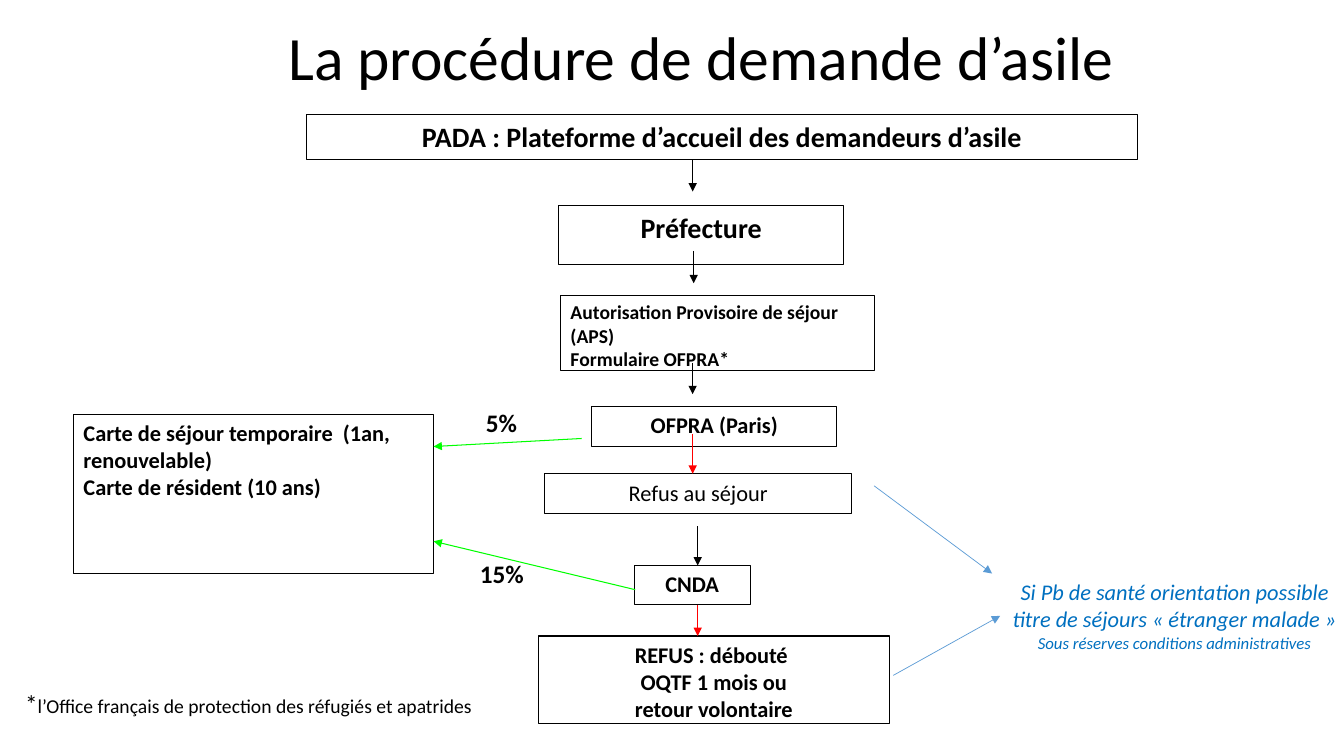
from lxml import etree
from pptx import Presentation
from pptx import util as u
from pptx.dml.color import RGBColor
from pptx.enum import shapes, text
from pptx.oxml.ns import qn

COLOURS = {
    "ink": "000000",
    "paper": "FFFFFF",
    "granted": "00FF00",
    "refused": "FF0000",
    "health": "5B9BD5",
    "health_text": "0070C0",
}
FONT = "Calibri"
LEFT, CENTER = text.PP_ALIGN.LEFT, text.PP_ALIGN.CENTER

presentation = Presentation()
presentation.slide_width, presentation.slide_height = u.Inches(13.33), u.Inches(7.5)
slide = presentation.slides.add_slide(presentation.slide_layouts[5])
CELL = presentation.slide_height / 75  # square grid, 75 rows high


def grid(*cells):
    return [round(cell * CELL) for cell in cells]


def write(frame, paragraphs, align=LEFT, bold=False, italic=False, colour="ink"):
    """Fill a frame; each paragraph is a list of (wording, size) runs."""
    for index, runs in enumerate(paragraphs):
        paragraph = frame.paragraphs[0] if index == 0 else frame.add_paragraph()
        paragraph.alignment = align
        for wording, size in runs:
            run = paragraph.add_run()
            run.text = wording
            run.font.name, run.font.size = FONT, u.Pt(size)
            run.font.bold, run.font.italic = bold, italic
            run.font.color.rgb = RGBColor.from_string(COLOURS[colour])


title = slide.shapes.title
title.left, title.top, title.width, title.height = grid(27.6, -0.2, 88.6, 12.5)
title.text_frame.vertical_anchor = text.MSO_ANCHOR.MIDDLE
write(title.text_frame, [[("La procédure de demande d’asile", 44)]])
title.text_frame.paragraphs[0].line_spacing = 0.9

# Steps: place on the grid, size, alignment, bold, lines
steps = [
    ((30.4, 11.4, 82.4, 4.4), 20, CENTER, True,
     ["PADA : Plateforme d’accueil des demandeurs d’asile"]),
    ((55.4, 20.4, 28.3, 5.8), 20, CENTER, True, ["Préfecture"]),
    ((55.6, 29.3, 31.1, 7.5), 14, LEFT, True,
     ["Autorisation Provisoire de séjour (APS)", "Formulaire OFPRA*"]),
    ((58.7, 40.3, 24.3, 4), 16, CENTER, True, ["OFPRA (Paris)"]),
    ((54, 47, 30.5, 3.9), 16, CENTER, False, ["Refus au séjour"]),
    ((62.9, 56.1, 11.5, 3.9), 16, CENTER, True, ["CNDA"]),
    ((53.4, 63.1, 34.8, 8.7), 16, CENTER, True,
     ["REFUS : débouté ", "OQTF 1 mois ou", "retour volontaire"]),
    ((7.3, 41.1, 35.7, 15.8), 16, LEFT, True,
     ["Carte de séjour temporaire  (1an, renouvelable)", "Carte de résident (10 ans)"]),
]
for place, size, align, bold, lines in steps:
    box = slide.shapes.add_shape(shapes.MSO_SHAPE.RECTANGLE, *grid(*place))
    box.shadow.inherit = False
    box.fill.solid()
    box.fill.fore_color.rgb = RGBColor.from_string(COLOURS["paper"])
    box.line.color.rgb = RGBColor.from_string(COLOURS["ink"])
    box.line.width = u.Pt(0.75)
    box.text_frame.vertical_anchor = text.MSO_ANCHOR.TOP
    write(box.text_frame, [[(line, size)] for line in lines], align, bold)

# Arrows: start, end, colour, line width
arrows = [
    ((68.7, 15.8), (68.7, 19), "ink", 0.75),
    ((68.8, 24.9), (68.8, 28.1), "ink", 0.75),
    ((68.7, 36), (68.7, 39.1), "ink", 0.75),
    ((68.7, 43.1), (68.7, 47), "refused", 0.75),
    ((69.2, 52.2), (69.2, 56.1), "ink", 0.75),
    ((69.2, 60), (69.2, 63.1), "refused", 0.75),
    ((57.7, 43.5), (43, 44.3), "granted", 0.75),
    ((63, 58.5), (43, 53.7), "granted", 0.75),
    ((86.7, 48.2), (98.4, 56.9), "health", 0.5),
    ((88.6, 67), (99.2, 61.1), "health", 0.5),
]
for start, end, colour, width in arrows:
    arrow = slide.shapes.add_connector(
        shapes.MSO_CONNECTOR.STRAIGHT, *grid(*start, *end))
    arrow.line.color.rgb = RGBColor.from_string(COLOURS[colour])
    arrow.line.width = u.Pt(width)
    etree.SubElement(arrow.line._get_or_add_ln(), qn("a:tailEnd"), type="triangle")
    etree.SubElement(arrow._element.spPr, qn("a:effectLst"))

# Free text: place, wraps, paragraphs, formatting
notes = [
    ((47.2, 39.9, 9.4, 4), True, [[("5%", 18)]], {"bold": True}),
    ((46.6, 54.9, 9.5, 4), True, [[("15%", 18)]], {"bold": True}),
    ((1.5, 67.8, 47.2, 4), True,
     [[("*", 18), ("l’Office français de protection des réfugiés et apatrides", 14)]], {}),
    ((99.2, 56.9, 34.6, 8.4), False,
     [[("Si Pb de santé orientation possible", 16)],
      [("titre de séjours « étranger malade »", 16)],
      [("Sous réserves conditions administratives", 12)]],
     {"align": CENTER, "italic": True, "colour": "health_text"}),
]
for place, wraps, paragraphs, formatting in notes:
    note = slide.shapes.add_textbox(*grid(*place))
    note.text_frame.word_wrap = wraps
    write(note.text_frame, paragraphs, **formatting)

presentation.save("out.pptx")
